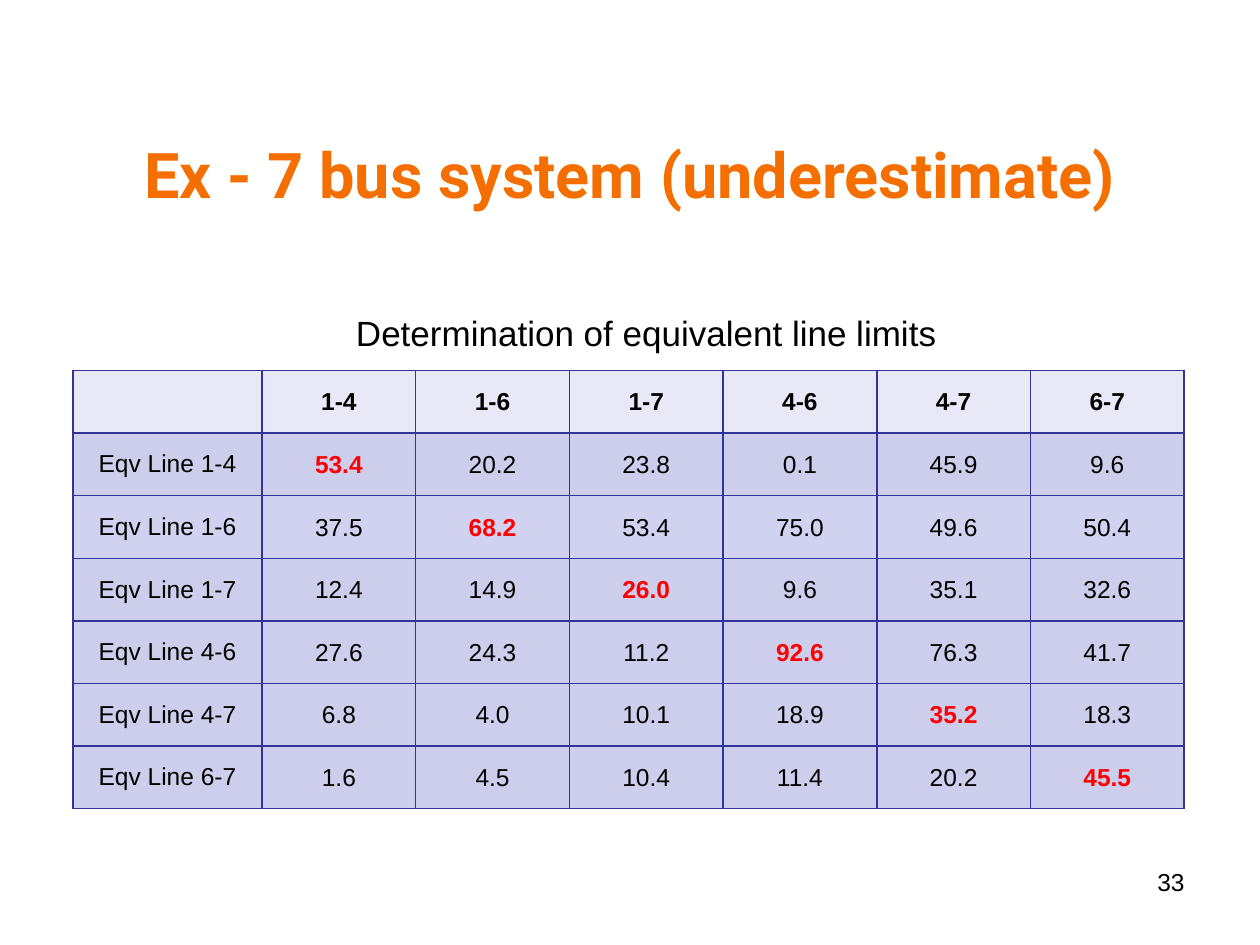
import pptx
import pptx.util
import pptx.dml.color
import pptx.enum.text
import pptx.oxml
import pptx.oxml.ns

Inches = pptx.util.Inches
Pt = pptx.util.Pt
ALIGN = pptx.enum.text.PP_ALIGN
MIDDLE = pptx.enum.text.MSO_ANCHOR.MIDDLE

TITLE = "Ex - 7 bus system (underestimate)"
CAPTION = "Determination of equivalent line limits"
PAGE = "33"
LINES = ["1-4", "1-6", "1-7", "4-6", "4-7", "6-7"]
LIMITS = [
    ["53.4", "20.2", "23.8", "0.1", "45.9", "9.6"],
    ["37.5", "68.2", "53.4", "75.0", "49.6", "50.4"],
    ["12.4", "14.9", "26.0", "9.6", "35.1", "32.6"],
    ["27.6", "24.3", "11.2", "92.6", "76.3", "41.7"],
    ["6.8", "4.0", "10.1", "18.9", "35.2", "18.3"],
    ["1.6", "4.5", "10.4", "11.4", "20.2", "45.5"],
]
HEAD_FILL, ROW_FILL, ALT_FILL = "E8E8F6", "CDCDEC", "D1D1F0"
BLACK, RED, ORANGE, BORDER = "000000", "FF0000", "F56F00", "333399"
LABEL_INSETS = (0.1, 0.05, 0.1, 0.05)
VALUE_INSETS = (0.01, 0.01, 0.01, 0)


def rgb(value):
    return pptx.dml.color.RGBColor.from_string(value)


def write(tf, text, size, color=BLACK, bold=False, font="Arial", align=ALIGN.CENTER):
    p = tf.paragraphs[0]
    p.alignment = align
    r = p.add_run()
    r.text = text
    r.font.size = Pt(size)
    r.font.name = font
    r.font.bold = bold
    r.font.color.rgb = rgb(color)


def place(sp, left, top, width, height):
    sp.left, sp.top = Inches(left), Inches(top)
    sp.width, sp.height = Inches(width), Inches(height)


def add_text(s, box, text, size, align):
    tf = s.shapes.add_textbox(*map(Inches, box)).text_frame
    tf.word_wrap = True
    write(tf, text, size, align=align)


def set_borders(cell):
    tc_pr = cell._tc.get_or_add_tcPr()
    for i, side in enumerate(("lnL", "lnR", "lnT", "lnB")):
        tc_pr.insert(i, pptx.oxml.parse_xml(
            f'<a:{side} {pptx.oxml.ns.nsdecls("a")} w="{Pt(1)}"><a:solidFill>'
            f'<a:srgbClr val="{BORDER}"/></a:solidFill></a:{side}>'))


def fill_cell(cell, text, fill, color, bold, insets):
    cell.fill.solid()
    cell.fill.fore_color.rgb = rgb(fill)
    cell.vertical_anchor = MIDDLE
    (cell.margin_left, cell.margin_top,
     cell.margin_right, cell.margin_bottom) = map(Inches, insets)
    if text:
        write(cell.text_frame, text, 14, color, bold)
    set_borders(cell)


def add_limits_table(s):
    rows = [[""] + LINES]
    rows += [[f"Eqv Line {line}"] + values for line, values in zip(LINES, LIMITS)]
    n = len(rows)
    table = s.shapes.add_table(n, n, Inches(0.58), Inches(2.94),
                               Inches(8.83), Inches(3.48)).table
    for i in range(n):
        table.columns[i].width = Inches(1.22 if i else 1.5)
        table.rows[i].height = Inches(3.48 / n)
    for i, row in enumerate(rows):
        fill = {0: HEAD_FILL, 2: ALT_FILL}.get(i, ROW_FILL)
        for j, text in enumerate(row):
            own_limit = i == j > 0
            fill_cell(table.cell(i, j), text, fill,
                      RED if own_limit else BLACK, own_limit or i == 0,
                      VALUE_INSETS if i and j else LABEL_INSETS)


def main():
    prs = pptx.Presentation()
    prs.slide_width, prs.slide_height = Inches(10), Inches(7.5)
    s = prs.slides.add_slide(prs.slide_layouts[5])
    title = s.shapes.title
    place(title, 0.5, 0.75, 9, 1.25)
    title.text_frame.vertical_anchor = MIDDLE
    write(title.text_frame, TITLE, 36, ORANGE, True, "Roboto")
    add_text(s, (7.17, 6.83, 2.33, 0.52), PAGE, 14, ALIGN.RIGHT)
    add_text(s, (2.42, 2.42, 5.42, 0.44), CAPTION, 20, ALIGN.CENTER)
    add_limits_table(s)
    prs.save("out.pptx")


if __name__ == "__main__":
    main()
